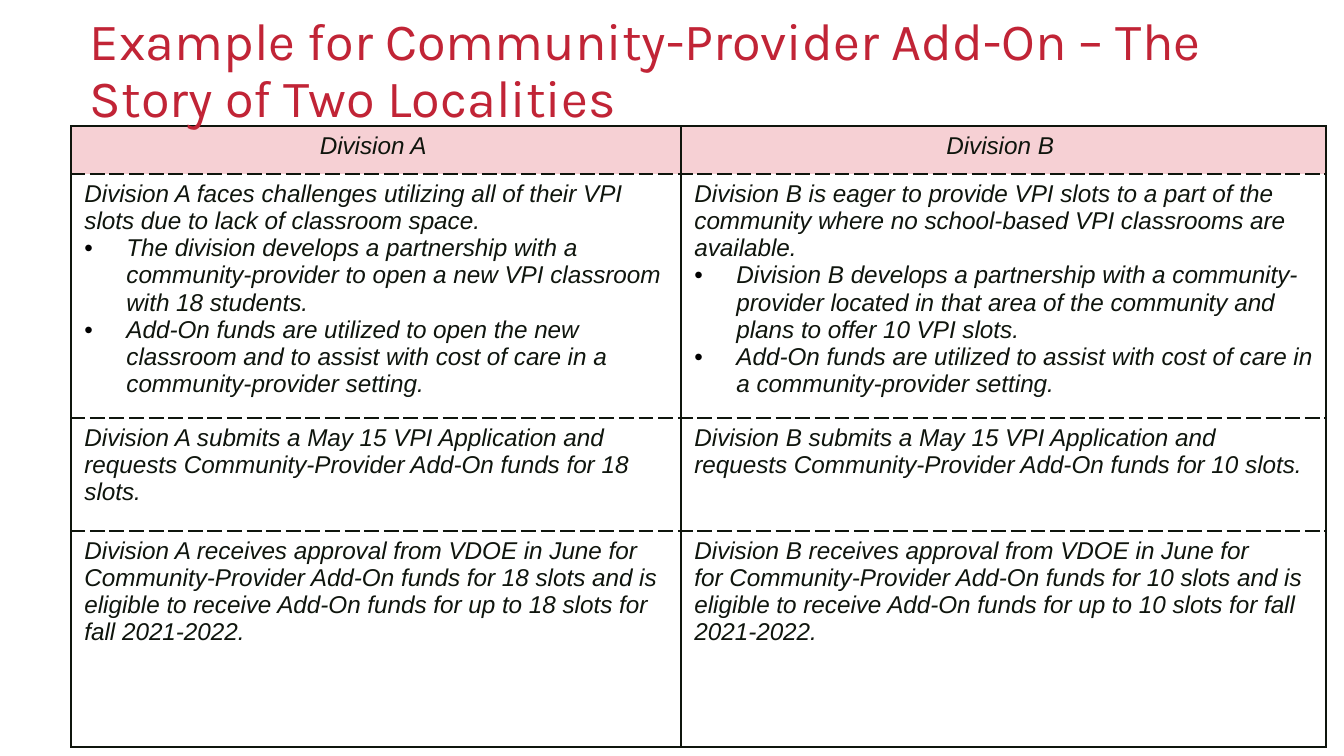
from lxml import etree
from pptx import Presentation
from pptx import util as u
from pptx.dml.color import RGBColor
from pptx.enum import text
from pptx.oxml import ns

PX = 6804  # EMU in one px
COLORS = {"title": "C12436", "ink": "0F150D", "header": "F6D0D4", "bullet": "000000"}
TITLE_FORMAT = {"name": "Karla", "size": u.Pt(28)}
CELL_FORMAT = {"name": "Arial", "size": u.Pt(13), "italic": True}
COLUMNS = [610, 645]
ROWS = [48, 244, 113, 216]
INDENT = 42

# Each cell is a list of paragraphs; a leading "•" marks a bullet
CONTENT = [
    [["Division A "], ["Division B "]],
    [
        [
            "Division A faces challenges utilizing all of their VPI slots due to lack of classroom space.",
            "•The division develops a partnership with a community-provider to open a new VPI classroom with 18 students.",
            "•Add-On funds are utilized to open the new classroom and to assist with cost of care in a community-provider setting.",
        ],
        [
            "Division B is eager to provide VPI slots to a part of the community where no school-based VPI classrooms are available.",
            "•Division B develops a partnership with a community-provider located in that area of the community and plans to offer 10 VPI slots.",
            "•Add-On funds are utilized to assist with cost of care in a community-provider setting.",
        ],
    ],
    [
        ["Division A submits a May 15 VPI Application and requests Community-Provider Add-On funds for 18 slots."],
        ["Division B submits a May 15 VPI Application and requests Community-Provider Add-On funds for 10 slots."],
    ],
    [
        ["Division A receives approval from VDOE in June for Community-Provider Add-On funds for 18 slots and is eligible to receive Add-On funds for up to 18 slots for fall 2021-2022."],
        [
            "Division B receives approval from VDOE in June for",
            "for Community-Provider Add-On funds for 10 slots and is eligible to receive Add-On funds for up to 10 slots for fall 2021-2022.",
        ],
    ],
]


def add_span(para, words, formats, color):
    span = para.add_run()
    span.text = words
    for name, value in formats.items():
        setattr(span.font, name, value)
    span.font.color.rgb = RGBColor.from_string(COLORS[color])


def add_child(parent, tag, **attributes):
    return etree.SubElement(parent, ns.qn(tag), attributes)


deck = Presentation()
deck.slide_width, deck.slide_height = 1344 * PX, 756 * PX
page = deck.slides.add_slide(deck.slide_layouts[6])

# Table
table = page.shapes.add_table(
    len(ROWS), len(COLUMNS), 71 * PX, 126 * PX, sum(COLUMNS) * PX, sum(ROWS) * PX
).table
table.first_row = table.horz_banding = False
for column, width in zip(table.columns, COLUMNS):
    column.width = width * PX
for row, height in zip(table.rows, ROWS):
    row.height = height * PX

for r, line in enumerate(CONTENT):
    for c, paragraphs in enumerate(line):
        cell = table.cell(r, c)

        # Borders: dashed between rows, solid elsewhere
        dashes = {
            "L": "solid",
            "R": "solid",
            "T": "sysDash" if r > 0 else "solid",
            "B": "sysDash" if r < len(ROWS) - 1 else "solid",
        }
        properties = cell._tc.get_or_add_tcPr()
        for side, dash in dashes.items():
            border = add_child(properties, f"a:ln{side}", w=str(u.Pt(1)))
            fill = add_child(border, "a:solidFill")
            add_child(fill, "a:srgbClr", val=COLORS["ink"])
            add_child(border, "a:prstDash", val=dash)

        # Fill
        if r == 0:
            cell.fill.solid()
            cell.fill.fore_color.rgb = RGBColor.from_string(COLORS["header"])
        else:
            cell.fill.background()

        # Text
        frame = cell.text_frame
        for i, words in enumerate(paragraphs):
            para = frame.add_paragraph() if i else frame.paragraphs[0]
            if r == 0:
                para.alignment = text.PP_ALIGN.CENTER
            if words.startswith("•"):
                bullet = para._p.get_or_add_pPr()
                bullet.set("marL", str(INDENT * PX))
                bullet.set("indent", str(-INDENT * PX))
                add_child(add_child(bullet, "a:buClr"), "a:srgbClr", val=COLORS["bullet"])
                add_child(bullet, "a:buFont", typeface="Arial")
                add_child(bullet, "a:buChar", char="•")
            add_span(para, words.removeprefix("•"), CELL_FORMAT, "ink")

# Title
box = page.shapes.add_textbox(80 * PX, 18 * PX, 1264 * PX, 108 * PX)
frame = box.text_frame
frame_format = {
    "word_wrap": True,
    "vertical_anchor": text.MSO_ANCHOR.MIDDLE,
    "margin_left": 10 * PX,
    "margin_right": 10 * PX,
    "margin_top": 5 * PX,
    "margin_bottom": 5 * PX,
}
for name, value in frame_format.items():
    setattr(frame, name, value)
para = frame.paragraphs[0]
para.line_spacing = 0.9
add_span(para, "Example for Community-Provider Add-On – The Story of Two Localities", TITLE_FORMAT, "title")

deck.save("out.pptx")
